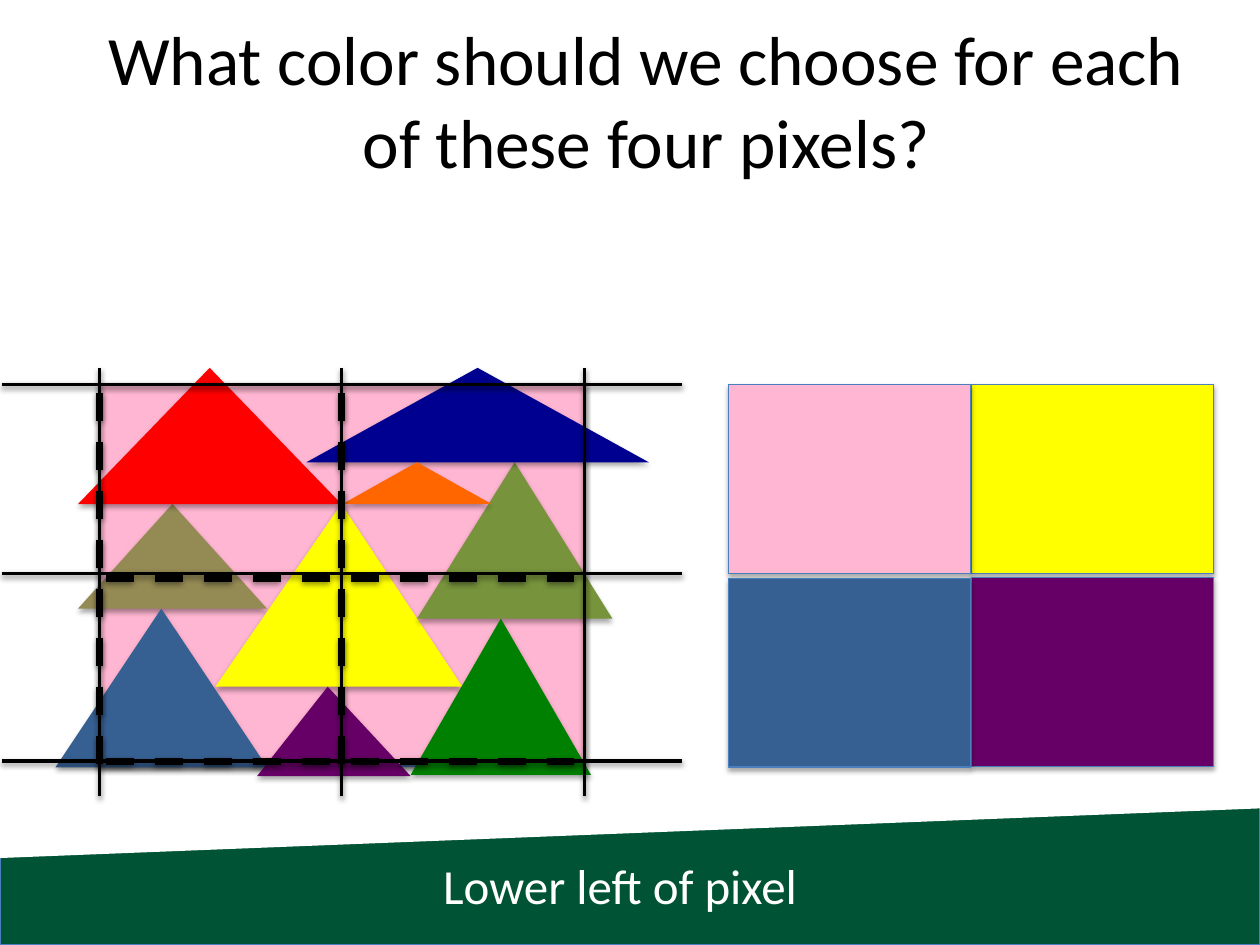
import dataclasses
import pptx
import pptx.dml.color
import pptx.enum.dml
import pptx.enum.shapes
import pptx.enum.text
import pptx.oxml
import pptx.oxml.ns
import pptx.util

Pt = pptx.util.Pt
SHAPE = pptx.enum.shapes.MSO_SHAPE
ALIGN = pptx.enum.text.PP_ALIGN
ANCHOR = pptx.enum.text.MSO_ANCHOR
BORDER = "4B7EBC"
PINK, YELLOW, PURPLE, BLUE = "FFB6D2", "FFFF00", "660066", "376092"
COLUMNS = (56.9, 195.3, 334.1)
ROWS = (219.6, 327.6, 434.9)


@dataclasses.dataclass(frozen=True)
class Area:
    left: float
    top: float
    width: float
    height: float


@dataclasses.dataclass(frozen=True)
class Triangle:
    area: Area
    color: str
    apex: float = 0.5


@dataclasses.dataclass(frozen=True)
class Stroke:
    start: tuple[float, float]
    end: tuple[float, float]
    width: float
    dashed: bool = False


TRIANGLES = (
    Triangle(Area(44.6, 288, 108, 59.8), "948A54"),
    Triangle(Area(123.1, 288, 141.1, 104.4), YELLOW, 0.51),
    Triangle(Area(238.3, 264.2, 111.6, 89.3), "77933C"),
    Triangle(Area(31.7, 347.8, 121, 90.7), BLUE),
    Triangle(Area(146.9, 392.4, 87.8, 51.1), PURPLE, 0.46),
    Triangle(Area(234.7, 353.5, 103, 89.3), "008000"),
    Triangle(Area(44.6, 210.2, 150.5, 77.8), "FF0000"),
    Triangle(Area(175, 210.2, 195.8, 54), "000090", 0.5),
    Triangle(Area(195.8, 264.2, 85, 23.8), "FF6600"),
)
ANSWERS = (
    (Area(555.1, 219.6, 138.4, 108), YELLOW),
    (Area(416.2, 219.6, 138.4, 108), PINK),
    (Area(555.1, 330, 138.4, 108), PURPLE),
    (Area(416.2, 330.4, 138.4, 108), BLUE),
)


def rgb(color: str) -> pptx.dml.color.RGBColor:
    return pptx.dml.color.RGBColor.from_string(color)


def cast_shadow(shape, opacity: int, distance: float) -> None:
    namespace = pptx.oxml.ns.nsdecls("a")
    shape._element.spPr.append(pptx.oxml.parse_xml(
        f'<a:effectLst {namespace}><a:outerShdw blurRad="{Pt(3.1)}" '
        f'dist="{Pt(distance)}" dir="5400000" rotWithShape="0">'
        f'<a:srgbClr val="000000"><a:alpha val="{opacity * 1000}"/></a:srgbClr>'
        "</a:outerShdw></a:effectLst>"))


def draw_shape(page, kind, area: Area, fill: str | None,
               border: str | None = None, shadow: bool = True):
    shape = page.shapes.add_shape(
        kind, Pt(area.left), Pt(area.top), Pt(area.width), Pt(area.height))
    if fill:
        shape.fill.solid()
        shape.fill.fore_color.rgb = rgb(fill)
    else:
        shape.fill.background()
    if border:
        shape.line.color.rgb = rgb(border)
        shape.line.width = Pt(0.75)
    else:
        shape.line.fill.background()
    if shadow:
        cast_shadow(shape, 35, 1.8)
    else:
        shape.shadow.inherit = False
    return shape


def draw_stroke(page, stroke: Stroke) -> None:
    connector = page.shapes.add_connector(
        pptx.enum.shapes.MSO_CONNECTOR.STRAIGHT,
        *(Pt(value) for value in stroke.start + stroke.end))
    connector.line.color.rgb = rgb("000000")
    connector.line.width = Pt(stroke.width)
    if stroke.dashed:
        connector.line.dash_style = pptx.enum.dml.MSO_LINE.DASH
    cast_shadow(connector, 38, 1.6)


def draw_text(page, area: Area, text: str, size: float, color: str,
              wrap: bool, anchor) -> None:
    box = page.shapes.add_textbox(
        Pt(area.left), Pt(area.top), Pt(area.width), Pt(area.height))
    frame = box.text_frame
    frame.text = text
    frame.word_wrap = wrap
    frame.vertical_anchor = anchor
    para = frame.paragraphs[0]
    para.alignment = ALIGN.CENTER if wrap else ALIGN.LEFT
    for span in para.runs:
        span.font.name = "Calibri"
        span.font.size = Pt(size)
        span.font.color.rgb = rgb(color)


def draw_footer(page) -> None:
    draw_shape(page, SHAPE.RECTANGLE, Area(0, 403.9, 720, 136.1), "005334", BORDER)
    slope = draw_shape(page, SHAPE.PARALLELOGRAM, Area(276.5, 46.8, 167, 720),
                       "FFFFFF", shadow=False)
    slope.adjustments[0] = 0.17
    slope.rotation = 90
    slope._element.spPr.xfrm.set("flipH", "1")


def draw_scene(page) -> None:
    width = COLUMNS[-1] - COLUMNS[0]
    draw_shape(page, SHAPE.RECTANGLE,
               Area(COLUMNS[0], ROWS[0], width, 218.2), PINK, BORDER)
    for triangle in TRIANGLES:
        shape = draw_shape(page, SHAPE.ISOSCELES_TRIANGLE, triangle.area, triangle.color)
        shape.adjustments[0] = triangle.apex
    draw_shape(page, SHAPE.RECTANGLE,
               Area(COLUMNS[0], ROWS[0], width, 216), None, "000000")
    for y in ROWS:
        draw_stroke(page, Stroke((1, y), (390, y), 2))
    for x in COLUMNS:
        draw_stroke(page, Stroke((x, 210.2), (x, 455), 2))


def draw_pixel_edges(page) -> None:
    for x in COLUMNS[:2]:
        draw_stroke(page, Stroke((x, 224.6), (x, 443.5), 4, True))
    for y in (330.4, ROWS[2]):
        draw_stroke(page, Stroke((60.5, y), (337.7, y), 4, True))


def main() -> None:
    deck = pptx.Presentation()
    deck.slide_width, deck.slide_height = Pt(720), Pt(540)
    page = deck.slides.add_slide(deck.slide_layouts[6])
    draw_footer(page)
    draw_scene(page)
    for area, color in ANSWERS:
        draw_shape(page, SHAPE.RECTANGLE, area, color, BORDER)
    draw_pixel_edges(page)
    draw_text(page, Area(246.2, 485.3, 220.3, 41), "Lower left of pixel",
              28, "FFFFFF", False, ANCHOR.TOP)
    draw_text(page, Area(48.2, 18, 642.2, 77.8),
              "What color should we choose for each of these four pixels?",
              39.6, "000000", True, ANCHOR.MIDDLE)
    deck.save("out.pptx")


if __name__ == "__main__":
    main()
